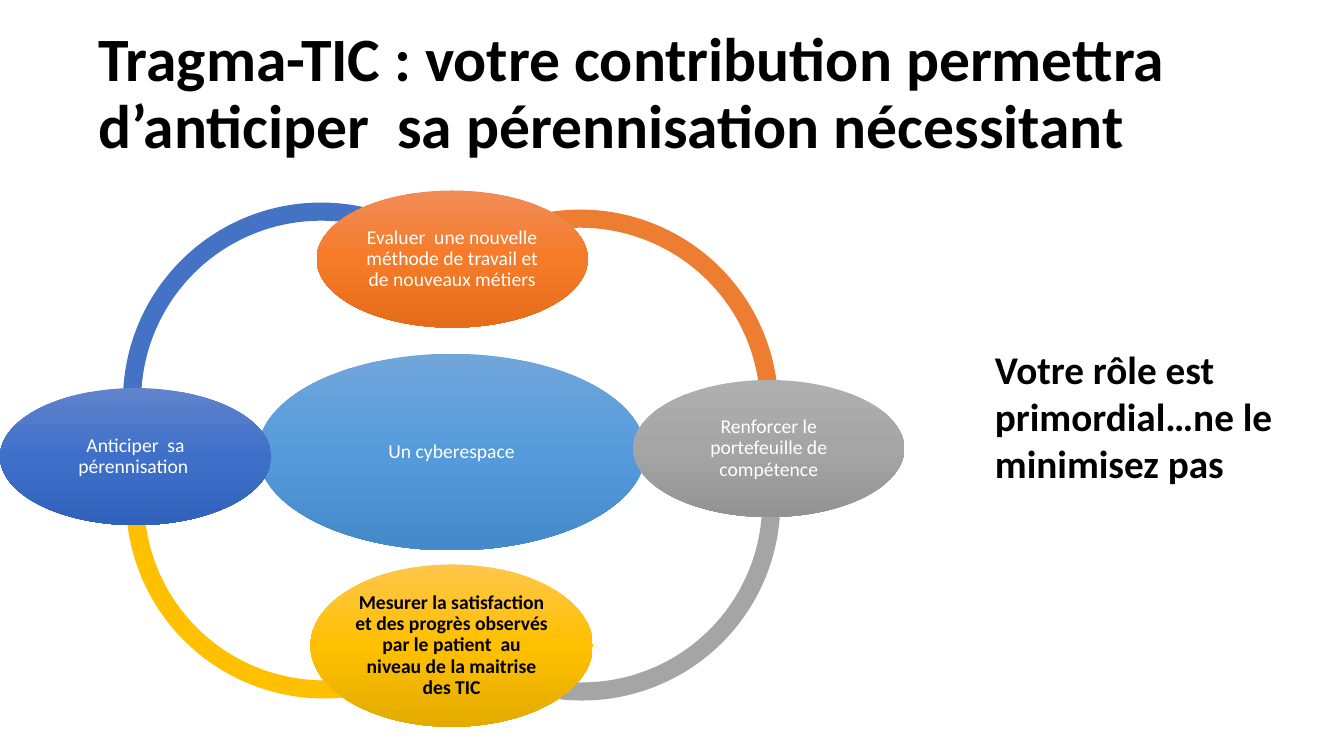
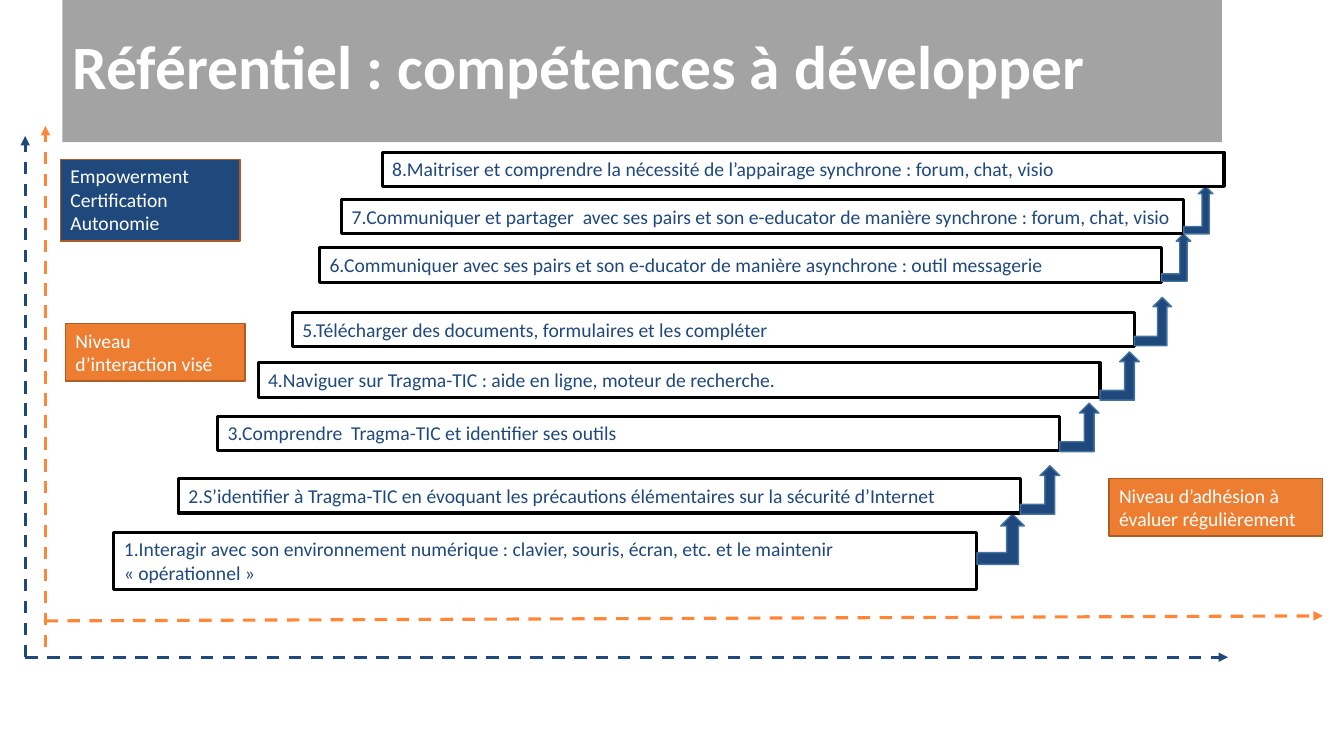
import copy
import pptx
import pptx.util
import pptx.dml.color
import pptx.enum.dml
import pptx.enum.shapes
import pptx.enum.text
import pptx.oxml.ns

SCALE = 9144
FONT = "Calibri"
HARD = chr(160)
BLACK, WHITE, NAVY, STEEL = "000000", "FFFFFF", "1F497D", "43739E"
BLUE, ORANGE, GRAY, GOLD = "4472C4", "ED7D31", "A5A5A5", "FFC000"
BAND, RUST, FLAME = "A3A3A3", "AF5C24", "FF8636"
SHAPE = pptx.enum.shapes.MSO_SHAPE
ALIGN = pptx.enum.text.PP_ALIGN
ANCHOR = pptx.enum.text.MSO_ANCHOR

ARCS = [
    (122, 201, 163, 313, BLUE),
    (125, 300, 49, 193, GOLD),
    (381, 302, 344, 132, GRAY),
    (379, 208, 228, 14, ORANGE),
]
OVALS = [
    ("Un cyberespace", (256, 351, 384, 195), ("71A6DB", "559BDB", "448ACA"), WHITE, False),
    ("Evaluer  une nouvelle méthode de travail et de nouveaux métiers",
     (314, 189, 269, 136), ("F18C57", "F67B28", "E56C19"), WHITE, False),
    ("Renforcer le portefeuille de compétence",
     (628, 377, 269, 136), ("AFAFAF", "A5A5A5", "939393"), WHITE, False),
    ("Mesurer la satisfaction et des progrès observés par le patient  au niveau de la maitrise des TIC",
     (308, 560, 280, 161), ("FFC64B", "FFC000", "E3AB00"), BLACK, True),
    ("Anticiper  sa pérennisation ",
     (0, 385, 269, 136), ("6183CB", "3E70CA", "3062BB"), WHITE, False),
]
STEPS = [
    ("Interagir avec son environnement numérique : clavier, souris, écran, etc. et le maintenir  "
     f"«{HARD}opérationnel{HARD}»",
     (113, 528, 856, 57), (510, 47, 50)),
    ("S’identifier à Tragma-TIC en évoquant les précautions élémentaires sur la sécurité d’Internet",
     (177, 475, 835, 34), (462, 39, 48)),
    ("Comprendre  Tragma-TIC et identifier ses outils", (216, 413, 835, 34), (400, 39, 48)),
    ("Naviguer sur Tragma-TIC : aide en ligne, moteur de recherche.",
     (256, 360, 835, 34), (349, 39, 48)),
    ("Télécharger des documents, formulaires et les compléter",
     (290, 310, 835, 34), (295, 37, 48)),
    ("Communiquer avec ses pairs et son e-ducator de manière asynchrone : outil messagerie",
     (317, 246, 835, 34), (232, 29, 47)),
    ("Communiquer et partager  avec ses pairs et son e-educator de manière synchrone : forum, chat, visio",
     (339, 198, 835, 34), (185, 29, 47)),
    ("Maitriser et comprendre la nécessité de l’appairage synchrone : forum, chat, visio",
     (379, 151, 835, 34), None),
]
LABELS = [
    ("Niveau d’interaction visé", (65, 321, 178, 57), ORANGE),
    ("Empowerment\nCertification\nAutonomie", (60, 158, 178, 81), NAVY),
    ("Niveau d’adhésion à évaluer régulièrement", (1100, 475, 212, 57), ORANGE),
]
AXES = [
    ((25, 652), (25, 135), NAVY),
    ((25, 652), (1218, 652), NAVY),
    ((45, 642), (45, 125), FLAME),
    ((45, 616), (1312, 611), FLAME),
]


def px(*nums):
    """Turn px lengths into EMU."""
    return [num * SCALE for num in nums]


def color(code):
    """Turn a hex string into a colour."""
    return pptx.dml.color.RGBColor.from_string(code)


def write(shape, text, size, ink, bold=False, align=ALIGN.LEFT, anchor=ANCHOR.TOP, lead=None):
    """Put styled text into a shape."""
    frame = shape.text_frame
    frame.word_wrap = True
    frame.vertical_anchor = anchor
    frame.text = text
    for para in frame.paragraphs:
        para.alignment = align
        para.line_spacing = lead
        font = para.font
        font.name, font.size, font.bold = FONT, pptx.util.Pt(size), bold
        font.color.rgb = color(ink)


def draw(slide, kind, area, fill=None, line=None, width=1):
    """Add a flat preset shape."""
    shape = slide.shapes.add_shape(kind, *px(*area))
    shape.shadow.inherit = False
    if fill:
        shape.fill.solid()
        shape.fill.fore_color.rgb = color(fill)
    else:
        shape.fill.background()
    if line:
        shape.line.color.rgb = color(line)
        shape.line.width = pptx.util.Pt(width)
    else:
        shape.line.fill.background()
    return shape


def title(slide, text, area, ink, fill=None):
    """Add the slide title, with a band if filled."""
    box = slide.shapes.add_textbox(*px(*area))
    if fill:
        box.fill.solid()
        box.fill.fore_color.rgb = color(fill)
    write(box, text, 44, ink, True, anchor=ANCHOR.MIDDLE, lead=0.9)


def arc(slide, left, top, start, end, fill):
    """Add one thin arc of the ring, clockwise between two angles in degrees."""
    side, thick = 393, 18
    shape = draw(slide, SHAPE.BLOCK_ARC, (left, top, side, side), fill)
    for i, value in enumerate((start * 0.6, end * 0.6, thick / side)):
        shape.adjustments[i] = value


def oval(slide, text, area, tints, ink, bold):
    """Add a shaded ellipse with centred text."""
    shape = draw(slide, SHAPE.OVAL, area)
    fill = shape.fill
    fill.gradient()
    fill.gradient_angle = 270
    stops = next(shape._element.iter(pptx.oxml.ns.qn("a:gsLst")))
    stops.insert(1, copy.deepcopy(stops[0]))
    for i, stop in enumerate(fill.gradient_stops):
        stop.position = i / 2
        stop.color.rgb = color(tints[i])
    frame = shape.text_frame
    frame.margin_left, frame.margin_top, frame.margin_right, frame.margin_bottom = px(2, 2, 2, 2)
    write(shape, text, 14, ink, bold, ALIGN.CENTER, ANCHOR.MIDDLE, 0.9)


def step(slide, text, area, rise):
    """Add a framed step and the arrow up to the next one."""
    write(draw(slide, SHAPE.RECTANGLE, area, line=BLACK, width=2.25), text, 14, NAVY)
    if rise:
        top, wide, high = rise
        draw(slide, SHAPE.BENT_UP_ARROW, (area[0] + area[2], top, wide, high), NAVY, STEEL)


def label(slide, text, area, fill):
    """Add a filled label."""
    write(draw(slide, SHAPE.RECTANGLE, area, fill, RUST), text, 14, WHITE)


def axis(slide, start, end, ink):
    """Add a dashed line with an arrowhead at its end."""
    kind = pptx.enum.shapes.MSO_CONNECTOR.STRAIGHT
    link = slide.shapes.add_connector(kind, *px(*start, *end))
    link.line.color.rgb = color(ink)
    link.line.width = pptx.util.Pt(2.25)
    link.line.dash_style = pptx.enum.dml.MSO_LINE.DASH
    props = link._element.spPr
    line = props.find(pptx.oxml.ns.qn("a:ln"))
    line.append(line.makeelement(pptx.oxml.ns.qn("a:tailEnd"), {"type": "triangle"}))
    props.append(props.makeelement(pptx.oxml.ns.qn("a:effectLst"), {}))


def ring(slide):
    """Build the slide with the ring of goals."""
    title(slide, "Tragma-TIC : votre contribution permettra d’anticiper  sa pérennisation nécessitant",
          (88, 22, 1150, 145), BLACK)
    for item in ARCS:
        arc(slide, *item)
    for item in OVALS:
        oval(slide, *item)
    note = slide.shapes.add_textbox(*px(977, 338, 316, 151))
    write(note, "Votre rôle est primordial…ne le minimisez pas", 28, BLACK, True)


def stairs(slide):
    """Build the slide with the stairs of skills."""
    for i, (text, area, rise) in enumerate(STEPS, 1):
        step(slide, f"{i}.{text}", area, rise)
    for item in LABELS:
        label(slide, *item)
    title(slide, "Référentiel : compétences à développer", (62, -4, 1150, 145), WHITE, BAND)
    for item in AXES:
        axis(slide, *item)


def main():
    """Build and save the deck."""
    deck = pptx.Presentation()
    deck.slide_width, deck.slide_height = px(1333, 750)
    for build in (ring, stairs):
        build(deck.slides.add_slide(deck.slide_layouts[6]))
    deck.save("out.pptx")


if __name__ == "__main__":
    main()
